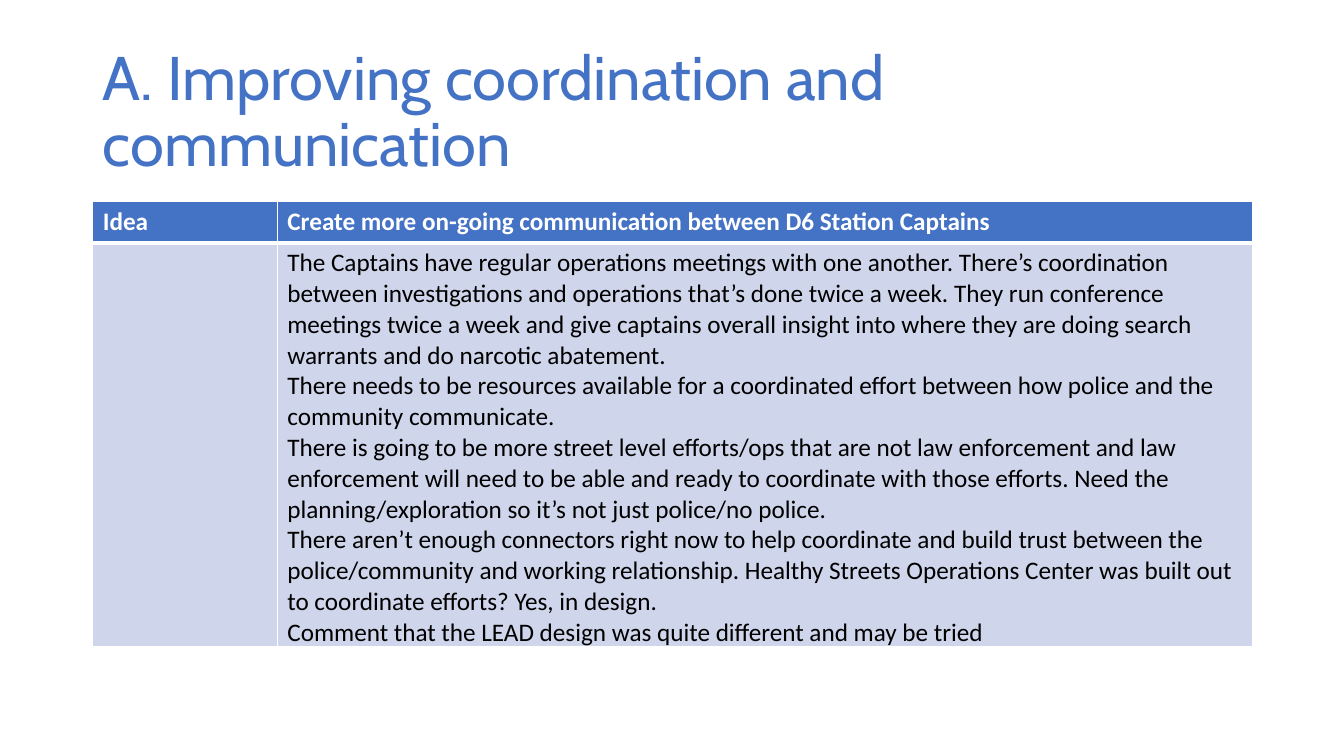
from lxml import etree
from pptx import Presentation
from pptx.dml.color import RGBColor
from pptx.enum.text import MSO_ANCHOR
from pptx.oxml.ns import qn
from pptx.util import Inches, Pt

MIDDLE = MSO_ANCHOR.MIDDLE
BLUE = RGBColor(0x44, 0x72, 0xC4)
PALE_BLUE = RGBColor(0xCF, 0xD5, 0xEA)
WHITE = RGBColor(0xFF, 0xFF, 0xFF)
BLACK = RGBColor(0x00, 0x00, 0x00)

TITLE = "A. Improving coordination and communication"
HEADINGS = ["Idea", "Create more on-going communication between D6 Station Captains"]
NOTES = [
    "The Captains have regular operations meetings with one another. There’s coordination "
    "between investigations and operations that’s done twice a week. They run conference "
    "meetings twice a week and give captains overall insight into where they are doing "
    "search warrants and do narcotic abatement.",
    "There needs to be resources available for a coordinated effort between how police "
    "and the community communicate.",
    "There is going to be more street level efforts/ops that are not law enforcement and "
    "law enforcement will need to be able and ready to coordinate with those efforts. "
    "Need the planning/exploration so it’s not just police/no police.",
    "There aren’t enough connectors right now to help coordinate and build trust between "
    "the police/community and working relationship. Healthy Streets Operations Center was "
    "built out to coordinate efforts? Yes, in design.",
    "Comment that the LEAD design was quite different and may be tried",
]


def add_span(para, text, font_name, size, color, bold=False):
    """Add one formatted run to a paragraph."""
    span = para.add_run()
    span.text = text
    span.font.name = font_name
    span.font.size = Pt(size)
    span.font.color.rgb = color
    span.font.bold = bold


def set_borders(cell, bottom_width):
    """Give a cell thin white borders and a bottom border of the given width."""
    properties = cell._tc.get_or_add_tcPr()
    for side, width in (("L", 1), ("R", 1), ("T", 1), ("B", bottom_width)):
        line = etree.SubElement(properties, qn(f"a:ln{side}"), w=str(Pt(width)))
        fill = etree.SubElement(line, qn("a:solidFill"))
        etree.SubElement(fill, qn("a:srgbClr"), val=str(WHITE))


def fill_cell(cell, texts, fill_color, text_color, bold, bottom_width):
    """Style a table cell and write one paragraph for each text."""
    set_borders(cell, bottom_width)
    cell.fill.solid()
    cell.fill.fore_color.rgb = fill_color
    frame = cell.text_frame
    for index, text in enumerate(texts):
        para = frame.add_paragraph() if index else frame.paragraphs[0]
        add_span(para, text, "Calibri", 18, text_color, bold)


def add_title(page, left, top, width, height):
    """Place the slide title in the given box."""
    box = page.shapes.add_textbox(left, top, width, height)
    frame = box.text_frame
    frame.word_wrap = True
    frame.vertical_anchor = MIDDLE
    para = frame.paragraphs[0]
    para.line_spacing = 0.9
    add_span(para, TITLE, "Cabin", 44, BLUE)


def add_idea_table(page, left, top, width, height):
    """Place the idea table with its heading row and notes in the given box."""
    table = page.shapes.add_table(2, 2, left, top, width, height).table
    label_width, heading_height = Inches(1.83), Inches(0.41)
    table.columns[0].width = label_width
    table.columns[1].width = width - label_width
    table.rows[0].height = heading_height
    table.rows[1].height = height - heading_height
    for column, heading in enumerate(HEADINGS):
        fill_cell(table.cell(0, column), [heading], BLUE, WHITE, True, 3)
    for column, texts in enumerate(([], NOTES)):
        fill_cell(table.cell(1, column), texts, PALE_BLUE, BLACK, False, 1)


def main():
    """Build and save the slide."""
    deck = Presentation()
    deck.slide_width, deck.slide_height = Inches(13.33), Inches(7.5)
    page = deck.slides.add_slide(deck.slide_layouts[6])
    left, width = Inches(0.92), Inches(11.5)
    add_title(page, left, Inches(0.4), width, Inches(1.45))
    add_idea_table(page, left, Inches(2), width, Inches(4.41))
    deck.save("out.pptx")


if __name__ == "__main__":
    main()
